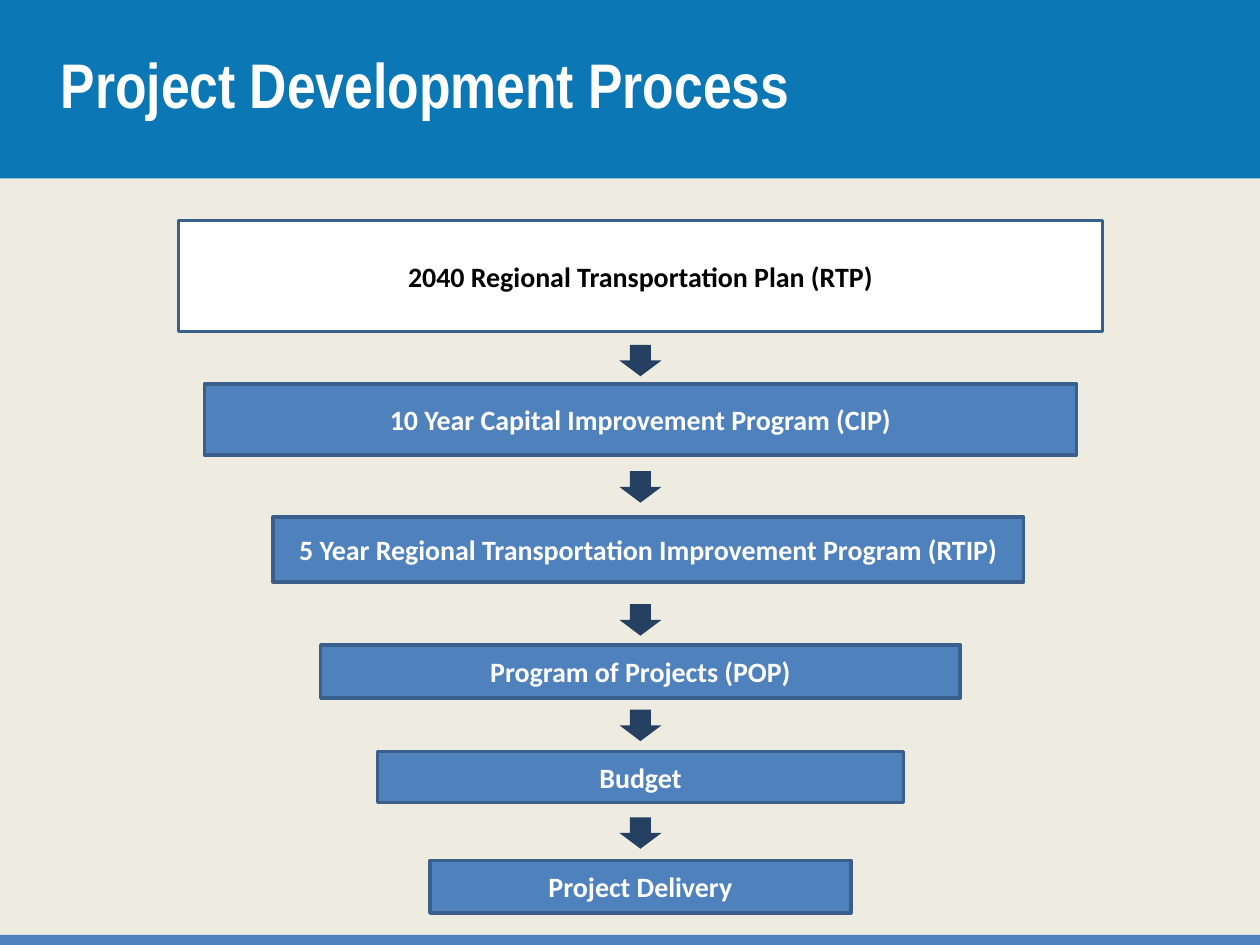
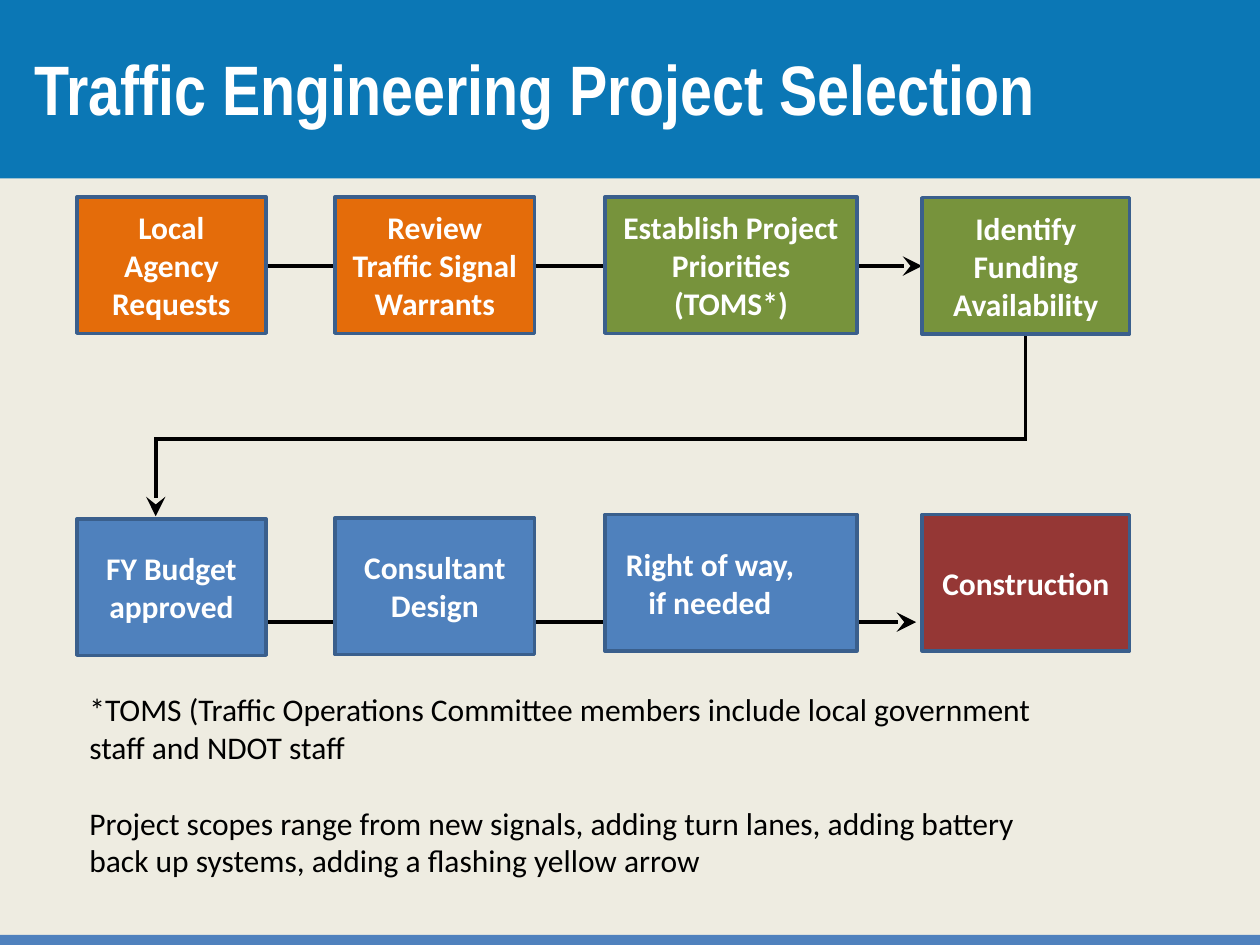
import itertools
import pptx
import pptx.dml.color
import pptx.enum.shapes
import pptx.enum.text
import pptx.oxml
import pptx.oxml.ns
import pptx.util
from dataclasses import dataclass

Pt = pptx.util.Pt
Kind = pptx.enum.shapes.MSO_SHAPE
Align = pptx.enum.text.PP_ALIGN
Anchor = pptx.enum.text.MSO_ANCHOR


@dataclass(frozen=True)
class Theme:
    page: str = "EEECE1"
    band: str = "0B77B5"
    blue: str = "4F81BD"
    edge: str = "3A5F8C"
    navy: str = "254061"
    orange: str = "E46C0A"
    green: str = "77933C"
    red: str = "953735"
    white: str = "FFFFFF"
    black: str = "000000"
    head: str = "Arial Narrow"
    body: str = "Calibri"
    step: int = 16
    node: int = 18
    edge_width: float = 2
    line_width: float = 2.25


T = Theme()
WIDE, HIGH = 720, 540

BANDS = [((0, 0, WIDE, 102), T.band), ((0, 534.2, WIDE, 5.8), T.blue)]

AXIS = 366
STEPS = [
    ("2040 Regional Transportation Plan (RTP)", 126, 528, 63.5, 0),
    ("10 Year Capital Improvement Program (CIP)", 219.5, 498.5, 40.5, 0),
    ("5 Year Regional Transportation Improvement Program (RTIP)", 295.5, 429, 37, 4.5),
    ("Program of Projects (POP)", 368.5, 365.5, 30.5, 0),
    ("Budget", 429.5, 300.5, 29, 0),
    ("Project Delivery", 491.75, 240.5, 30, 0),
]
ARROWS = [197, 269.25, 345.25, 405.5, 467]

COLUMNS = [(44, 108), (191.5, 114), (345.75, 144), (527, 118.5)]
NODE_HIGH = 78
ROWS = [
    [
        (["Local Agency Requests"], T.orange, 112.5),
        (["Review Traffic Signal Warrants"], T.orange, 112.5),
        (["Establish Project Priorities (TOMS*)"], T.green, 112.5),
        (["Identify Funding Availability"], T.green, 113),
    ],
    [
        (["FY Budget approved"], T.blue, 296.5),
        (["Consultant Design"], T.blue, 296),
        (["Right of way,", "if needed"], T.blue, 294),
        (["Construction"], T.red, 294),
    ],
]
ROUTES = [
    [(93, 152), (527, 152)],
    [(89, 355.5), (523.5, 355.5)],
    [(586, 191), (586, 250.75), (89, 250.75), (89, 295)],
]
NOTES = [
    "*TOMS (Traffic Operations Committee members include local government staff and NDOT staff",
    "Project scopes range from new signals, adding turn lanes, adding battery back up systems, adding a flashing yellow arrow",
]


def rgb(code):
    return pptx.dml.color.RGBColor.from_string(code)


def text(frame, lines, size, color=T.white, font=T.body, bold=True,
         align=Align.CENTER, anchor=Anchor.MIDDLE, gap=0, space=None):
    frame.word_wrap = True
    frame.auto_size = pptx.enum.text.MSO_AUTO_SIZE.NONE
    frame.vertical_anchor = anchor
    for i, line in enumerate(lines):
        para = frame.add_paragraph() if i else frame.paragraphs[0]
        para.text = line
        para.alignment = align
        para.line_spacing = space
        if i and gap:
            para.space_before = Pt(gap)
        para.font.size = Pt(size)
        para.font.name = font
        para.font.bold = bold
        para.font.color.rgb = rgb(color)


def block(slide, spot, fill, kind=Kind.RECTANGLE, edge=None):
    shape = slide.shapes.add_shape(kind, *map(Pt, spot))
    shape.shadow.inherit = False
    shape.fill.solid()
    shape.fill.fore_color.rgb = rgb(fill)
    if edge:
        shape.line.color.rgb = rgb(edge)
        shape.line.width = Pt(T.edge_width)
    else:
        shape.line.fill.background()
    return shape


def route(slide, points):
    legs = list(itertools.pairwise(points))
    for i, (start, end) in enumerate(legs, 1):
        line = slide.shapes.add_connector(
            pptx.enum.shapes.MSO_CONNECTOR.STRAIGHT, *map(Pt, start + end))
        line.line.color.rgb = rgb(T.black)
        line.line.width = Pt(T.line_width)
        props = line._element.spPr
        stroke = props.find(pptx.oxml.ns.qn("a:ln"))
        if i == len(legs):
            tail = pptx.oxml.parse_xml(
                f'<a:tailEnd {pptx.oxml.ns.nsdecls("a")} type="stealth" w="lg" len="lg"/>')
            stroke.append(tail)
        else:
            stroke.set("cap", "sq")
        props.append(pptx.oxml.parse_xml(
            f'<a:effectLst {pptx.oxml.ns.nsdecls("a")}/>'))


def start(deck, title, spot, size, space=None):
    slide = deck.slides.add_slide(deck.slide_layouts[5])
    head = slide.shapes.title
    head.left, head.top, head.width, head.height = map(Pt, spot)
    text(head.text_frame, [title], size, font=T.head, align=Align.LEFT, space=space)
    return slide


def share(deck, slide):
    fill = deck.slide_master.background.fill
    fill.solid()
    fill.fore_color.rgb = rgb(T.page)
    for i, (spot, color) in enumerate(BANDS):
        band = block(slide, spot, color)._element
        band.nvSpPr.cNvPr.set("id", str(90 + i))
        slide.slide_layout.shapes._spTree.insert(2 + i, band)


def process(deck):
    slide = start(deck, "Project Development Process", (27.5, 6, 648, 90), 36, 0.85)
    share(deck, slide)
    for i, (label, top, width, height, shift) in enumerate(STEPS):
        spot = (AXIS + shift - width / 2, top, width, height)
        fill, ink = (T.blue, T.white) if i else (T.white, T.black)
        box = block(slide, spot, fill, edge=T.edge)
        text(box.text_frame, [label], T.step, color=ink)
    for top in ARROWS:
        block(slide, (AXIS - 12, top, 24, 18), T.navy, Kind.DOWN_ARROW)


def choice(deck):
    slide = start(deck, "Traffic Engineering Project Selection", (12.5, 5, 648, 90), 40)
    for points in ROUTES:
        route(slide, points)
    for row in ROWS:
        for (left, width), (lines, fill, top) in zip(COLUMNS, row):
            box = block(slide, (left, top, width, NODE_HIGH), fill, edge=T.edge)
            text(box.text_frame, lines, T.node)
            if len(lines) > 1:
                first = box.text_frame.paragraphs[0]
                first._p.get_or_add_pPr().set("marR", str(Pt(24)))
    note = slide.shapes.add_textbox(*map(Pt, (44, 391, 576, 116.5)))
    text(note.text_frame, NOTES, T.node, color=T.black, bold=False,
         align=Align.LEFT, anchor=Anchor.TOP, gap=21.5)


def main():
    deck = pptx.Presentation()
    deck.slide_width, deck.slide_height = Pt(WIDE), Pt(HIGH)
    process(deck)
    choice(deck)
    deck.save("out.pptx")


if __name__ == "__main__":
    main()
